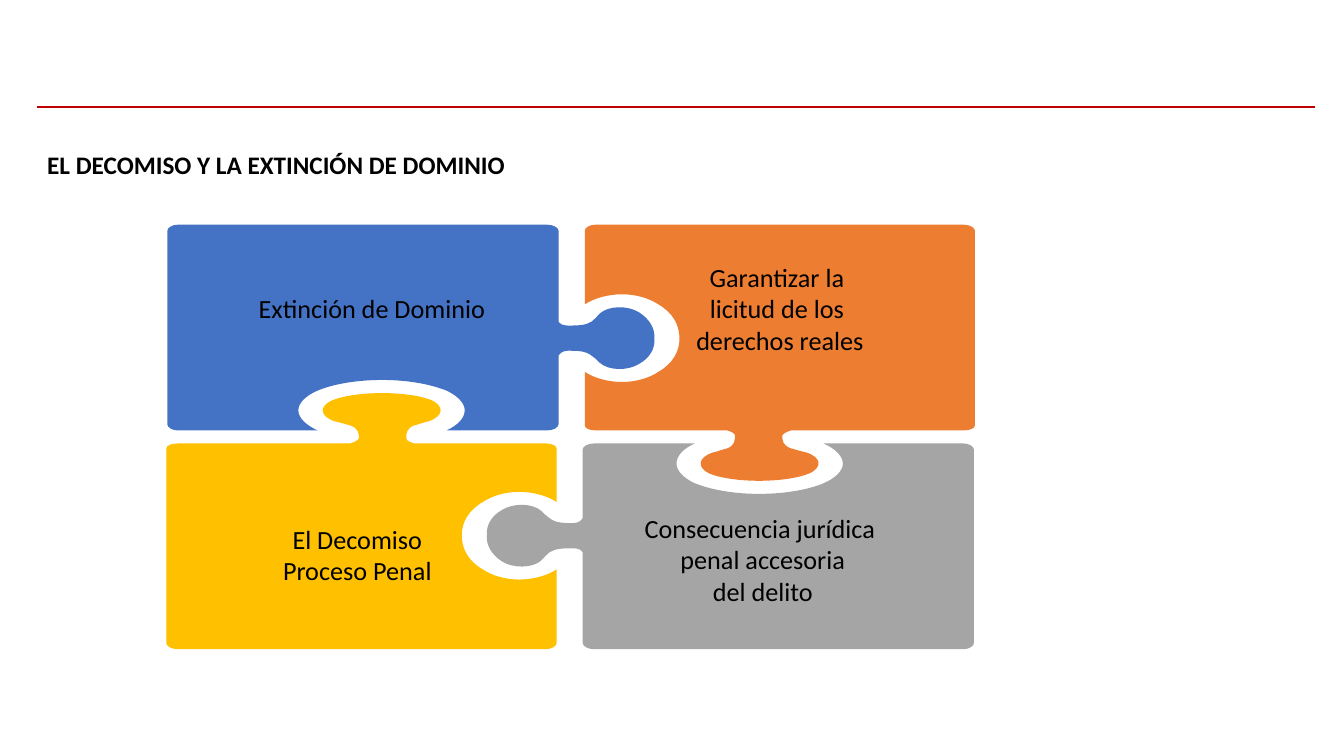
"""Build the slide on confiscation and asset forfeiture as a four-piece puzzle."""
from dataclasses import dataclass

from lxml import etree
from pptx import Presentation, util as u
from pptx.dml.color import RGBColor
from pptx.enum import shapes, text
from pptx.oxml import ns

Point = tuple[float, float]
Step = list[Point]

BLACK = RGBColor(0x00, 0x00, 0x00)
RED = RGBColor(0xC0, 0x00, 0x00)
BLUE = RGBColor(0x44, 0x72, 0xC4)
ORANGE = RGBColor(0xED, 0x7D, 0x31)
YELLOW = RGBColor(0xFF, 0xC0, 0x00)
GRAY = RGBColor(0xA5, 0xA5, 0xA5)

FONT = "Calibri"
TURN_SUM = (11.32, 8.67)

# fmt: off
SIDE_TAB = [
    (3.15, 4.27), (3.04, 4.22, 2.96, 4.15, 2.96, 4.07),
    (2.96, 4.0, 3.03, 3.93, 3.14, 3.88), (3.3, 3.81, 3.54, 3.77, 3.79, 3.77),
    (4.04, 3.77, 4.27, 3.81, 4.44, 3.88), (4.54, 3.93, 4.61, 4.0, 4.61, 4.07),
    (4.61, 4.15, 4.54, 4.22, 4.43, 4.27), (5.43, 4.27),
    (5.49, 4.27, 5.54, 4.24, 5.54, 4.21), (5.54, 3.53),
    (5.55, 3.51, 5.58, 3.48, 5.63, 3.48), (5.73, 3.48, 5.81, 3.48, 5.87, 3.53),
    (5.9, 3.55, 5.92, 3.57, 5.95, 3.6), (6.04, 3.68, 6.23, 3.68, 6.34, 3.61),
    (6.45, 3.55, 6.5, 3.45, 6.49, 3.36), (6.5, 3.27, 6.45, 3.17, 6.34, 3.1),
    (6.23, 3.03, 6.04, 3.03, 5.95, 3.11), (5.92, 3.14, 5.9, 3.17, 5.87, 3.19),
    (5.81, 3.23, 5.73, 3.23, 5.63, 3.23), (5.58, 3.23, 5.55, 3.21, 5.54, 3.19),
    (5.54, 2.29), (5.54, 2.26, 5.49, 2.23, 5.43, 2.23),
    (1.76, 2.23), (1.71, 2.23, 1.66, 2.26, 1.66, 2.29),
    (1.66, 4.21), (1.66, 4.24, 1.71, 4.27, 1.76, 4.27),
]
BOTTOM_TAB = [
    (5.8, 3.02), (5.89, 2.96, 6.03, 2.92, 6.17, 2.92),
    (6.31, 2.92, 6.44, 2.96, 6.53, 3.02), (6.67, 3.1, 6.74, 3.22, 6.74, 3.36),
    (6.74, 3.49, 6.67, 3.61, 6.53, 3.69), (6.44, 3.75, 6.31, 3.79, 6.17, 3.79),
    (6.03, 3.79, 5.89, 3.75, 5.8, 3.69), (5.8, 4.22),
    (5.8, 4.25, 5.85, 4.27, 5.9, 4.27), (7.21, 4.27),
    (7.25, 4.28, 7.29, 4.3, 7.29, 4.32), (7.29, 4.37, 7.29, 4.42, 7.21, 4.45),
    (7.16, 4.46, 7.12, 4.48, 7.07, 4.49), (6.92, 4.54, 6.91, 4.64, 7.04, 4.7),
    (7.17, 4.75, 7.36, 4.77, 7.53, 4.77), (7.7, 4.77, 7.89, 4.75, 8.02, 4.7),
    (8.16, 4.64, 8.15, 4.54, 8.0, 4.49), (7.95, 4.48, 7.89, 4.46, 7.85, 4.45),
    (7.76, 4.42, 7.76, 4.37, 7.76, 4.32), (7.77, 4.3, 7.81, 4.28, 7.85, 4.27),
    (9.56, 4.27), (9.62, 4.27, 9.67, 4.25, 9.67, 4.22),
    (9.67, 2.29), (9.67, 2.26, 9.62, 2.23, 9.56, 2.23),
    (5.9, 2.23), (5.85, 2.23, 5.8, 2.26, 5.8, 2.29),
]
# fmt: on


@dataclass(frozen=True)
class Insets:
    """Margins of a text frame in inches."""

    left: float = 0.1
    top: float = 0.05
    right: float = 0.1


@dataclass(frozen=True)
class Piece:
    """A puzzle piece, optionally given a half turn about the puzzle center."""

    lines: list[str]
    color: RGBColor
    outline: list[tuple[float, ...]]
    turned: bool
    insets: Insets


PIECES = [
    Piece(["Extinción de Dominio"], BLUE, SIDE_TAB, False, Insets(top=0.67, right=0.87)),
    Piece(["Garantizar la ", "licitud de los ", "derechos reales"],
          ORANGE, BOTTOM_TAB, False, Insets(top=0.36)),
    Piece(["El Decomiso", "Proceso Penal"],
          YELLOW, BOTTOM_TAB, True, Insets(top=1.29, right=0.18)),
    Piece(["Consecuencia jurídica ", "penal accesoria", "del delito"],
          GRAY, SIDE_TAB, True, Insets(left=0.74, top=0.68)),
]


def place_steps(piece: Piece) -> list[Step]:
    """Give the points of each outline step in slide lengths."""
    steps = []
    for values in piece.outline:
        points = list(zip(values[::2], values[1::2]))
        if piece.turned:
            points = [(TURN_SUM[0] - x, TURN_SUM[1] - y) for x, y in points]
        steps.append([(u.Inches(x), u.Inches(y)) for x, y in points])
    return steps


def bend_lines(shape, steps: list[Step]) -> None:
    """Turn the line segments of a freeform into curves where a step has controls."""
    lines = list(shape._element.iter(ns.qn("a:lnTo")))
    for line, step in zip(lines, steps):
        if len(step) == 1:
            continue
        curve = etree.Element(ns.qn("a:cubicBezTo"))
        for x, y in step:
            etree.SubElement(curve, ns.qn("a:pt"),
                             x=str(x - shape.left), y=str(y - shape.top))
        line.getparent().replace(line, curve)


def write_text(shape, lines: list[str], *, size: float, bold: bool = False,
               align: text.PP_ALIGN = text.PP_ALIGN.CENTER,
               insets: Insets = Insets()) -> None:
    """Write one paragraph per line with the given format."""
    frame = shape.text_frame
    frame.word_wrap = True
    frame.vertical_anchor = text.MSO_ANCHOR.TOP
    frame.margin_left = u.Inches(insets.left)
    frame.margin_top = u.Inches(insets.top)
    frame.margin_right = u.Inches(insets.right)
    frame.text = "\n".join(lines)
    for paragraph in frame.paragraphs:
        paragraph.alignment = align
        paragraph.font.name = FONT
        paragraph.font.size = u.Pt(size)
        paragraph.font.bold = bold
        paragraph.font.color.rgb = BLACK


def draw_piece(slide, piece: Piece) -> None:
    """Draw a puzzle piece with its label."""
    steps = place_steps(piece)
    ends = [step[-1] for step in steps]
    builder = slide.shapes.build_freeform(*ends[0])
    builder.add_line_segments(ends[1:], close=True)
    shape = builder.convert_to_shape()
    bend_lines(shape, steps[1:])
    shape.shadow.inherit = False
    shape.fill.solid()
    shape.fill.fore_color.rgb = piece.color
    shape.line.fill.background()
    write_text(shape, piece.lines, size=18.7, insets=piece.insets)


def draw_rule(slide) -> None:
    """Draw the red rule above the title."""
    rule = slide.shapes.add_connector(
        shapes.MSO_CONNECTOR.STRAIGHT,
        u.Inches(0.37), u.Inches(1.06), u.Inches(13.04), u.Inches(1.06))
    rule.line.color.rgb = RED
    rule.line.width = u.Pt(1.5)
    etree.SubElement(rule._element.spPr, ns.qn("a:effectLst"))


def main() -> None:
    """Build and save the presentation."""
    presentation = Presentation()
    presentation.slide_width = u.Inches(13.33)
    presentation.slide_height = u.Inches(7.5)
    slide = presentation.slides.add_slide(presentation.slide_layouts[6])
    draw_rule(slide)
    title = slide.shapes.add_textbox(
        u.Inches(0.37), u.Inches(1.43), u.Inches(11.46), u.Inches(1.75))
    write_text(title, ["EL DECOMISO Y LA EXTINCIÓN DE DOMINIO"], size=18, bold=True,
               align=text.PP_ALIGN.JUSTIFY)
    for piece in PIECES:
        draw_piece(slide, piece)
    presentation.save("out.pptx")


if __name__ == "__main__":
    main()
